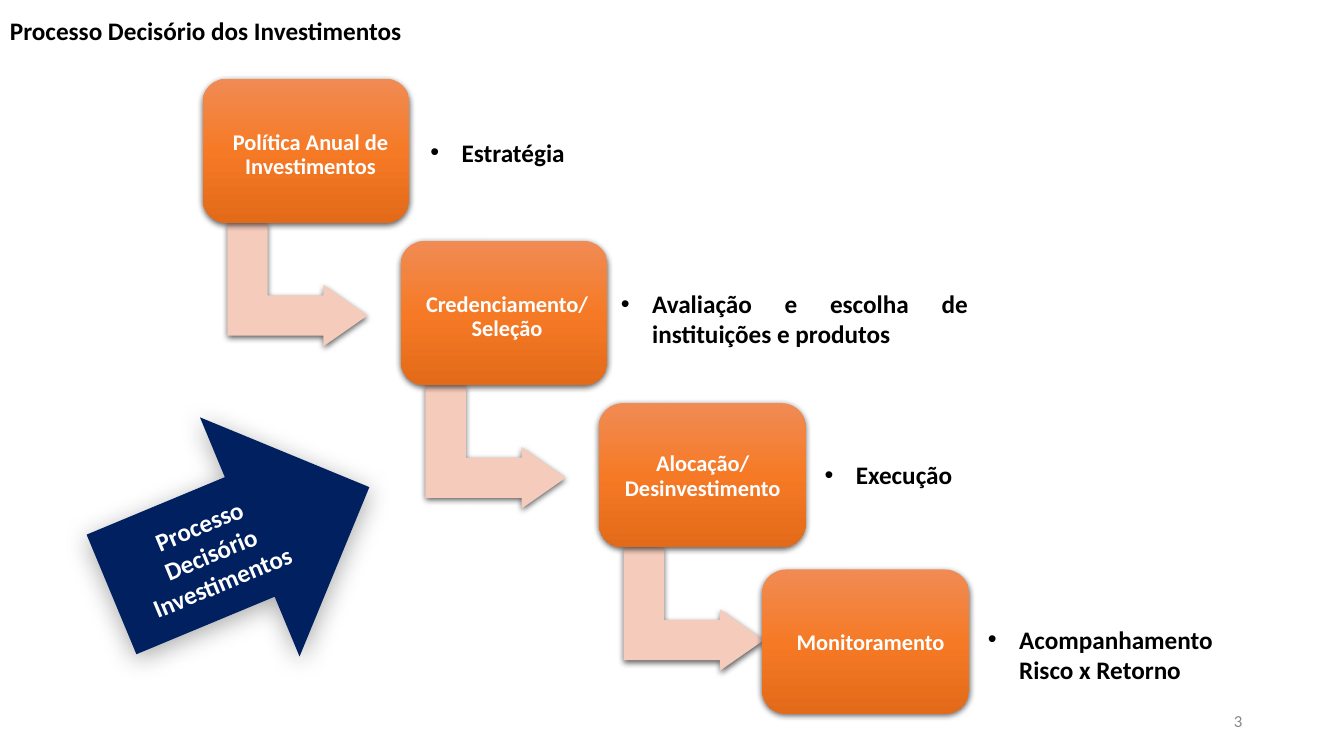
from dataclasses import dataclass
from copy import deepcopy
from lxml import etree
from pptx import Presentation
from pptx.dml.color import RGBColor
from pptx.enum.shapes import MSO_SHAPE
from pptx.enum.text import MSO_ANCHOR, PP_ALIGN
from pptx.oxml.ns import qn
from pptx.util import Inches, Pt

ROUND = MSO_SHAPE.ROUNDED_RECTANGLE
BENT = MSO_SHAPE.BENT_UP_ARROW
ARROW = MSO_SHAPE.RIGHT_ARROW
LEFT, MID, RIGHT, JUST = PP_ALIGN.LEFT, PP_ALIGN.CENTER, PP_ALIGN.RIGHT, PP_ALIGN.JUSTIFY
TOP, CENTER = MSO_ANCHOR.TOP, MSO_ANCHOR.MIDDLE

BLACK = RGBColor(0x00, 0x00, 0x00)
WHITE = RGBColor(0xFF, 0xFF, 0xFF)
GRAY = RGBColor(0x88, 0x88, 0x88)
NAVY = RGBColor(0x00, 0x20, 0x60)
PEACH = RGBColor(0xF5, 0xCB, 0xBC)
LIGHT = RGBColor(0xF0, 0x8B, 0x54)
ORANGE = RGBColor(0xF6, 0x7A, 0x26)
DARK = RGBColor(0xE3, 0x6A, 0x18)

CELL = Inches(0.1)  # grid square: the slide has 133.3 columns and 75 rows
FONT = "Calibri"
INDENT = Inches(0.31)
BOX_W, BOX_H = 20.5, 14.3
STEP_X, STEP_Y = 19.65, 16.1


@dataclass
class Area:
    col: float
    row: float
    cols: float
    rows: float

    def size(self) -> list[int]:
        return [round(n * CELL) for n in (self.col, self.row, self.cols, self.rows)]


@dataclass
class Shade:
    alpha: int
    blur: float
    dist: float
    angle: int


@dataclass
class Step:
    col: float
    row: float
    name: str
    label: Area
    note: str
    side: Area
    align: PP_ALIGN = JUST


SOFT = Shade(33, 17.8, 4, 87)
FIRM = Shade(63, 4.5, 1.5, 90)
X, Y = 20.1, 7.8
STEPS = [
    Step(X, Y, "Política Anual de Investimentos", Area(21.3, 12.5, 19, 5.9),
         "Estratégia", Area(41.7, 13.1, 24.9, 4), LEFT),
    Step(X + STEP_X, Y + STEP_Y, "Credenciamento/ Seleção", Area(40.8, 28.6, 19, 5.9),
         "Avaliação e escolha de instituições e produtos", Area(60.6, 28.1, 36.4, 7.1)),
    Step(X + 2 * STEP_X, Y + 2 * STEP_Y, "Alocação/ Desinvestimento",
         Area(60.2, 44.4, 19, 5.9), "Execução", Area(80.8, 45.1, 36.4, 4)),
    Step(75.6, 56.5, "Monitoramento", Area(76.2, 62.1, 20.3, 3.4),
         "Acompanhamento Risco x Retorno", Area(97, 61.4, 27.7, 7.1)),
]


def add_bullet(para) -> None:
    props = para._p.get_or_add_pPr()
    props.set("marL", str(INDENT))
    props.set("indent", str(-INDENT))
    tint = etree.SubElement(props, qn("a:buClr"))
    etree.SubElement(tint, qn("a:srgbClr"), val=str(BLACK))
    etree.SubElement(props, qn("a:buFont"), typeface="Arial")
    etree.SubElement(props, qn("a:buChar"), char="•")


def write(shape, text: str, *, size: float = 18, color: RGBColor = BLACK,
          bold: bool = True, align: PP_ALIGN = LEFT, anchor: MSO_ANCHOR = TOP,
          space: float = 1.0, bullet: bool = False) -> None:
    """Fill a shape with text, one paragraph a line."""
    frame = shape.text_frame
    frame.word_wrap = True
    frame.vertical_anchor = anchor
    frame.text = text
    for para in frame.paragraphs:
        if bullet:
            add_bullet(para)
        para.alignment = align
        para.line_spacing = space
        font = para.runs[0].font
        font.name, font.size, font.bold = FONT, Pt(size), bold
        font.color.rgb = color


def add_text(slide, area: Area, text: str, **style) -> None:
    write(slide.shapes.add_textbox(*area.size()), text, **style)


def add_shade(shape, shade: Shade) -> None:
    shape.shadow.inherit = False
    effects = shape._element.spPr.find(qn("a:effectLst"))
    outer = etree.SubElement(
        effects, qn("a:outerShdw"), blurRad=str(Pt(shade.blur)), dist=str(Pt(shade.dist)),
        dir=str(shade.angle * 60000), algn="ctr", rotWithShape="0")
    tint = etree.SubElement(outer, qn("a:srgbClr"), val=str(BLACK))
    etree.SubElement(tint, qn("a:alpha"), val=str(shade.alpha * 1000))


def add_form(slide, kind: MSO_SHAPE, area: Area, colors: list[RGBColor], shade: Shade,
             adjust: tuple[float, ...], turn: float = 0):
    """Draw a preset shape; several colours make a gradient from top to bottom."""
    shape = slide.shapes.add_shape(kind, *area.size())
    shape.rotation = turn
    for i, value in enumerate(adjust):
        shape.adjustments[i] = value
    shape.line.fill.background()
    fill = shape.fill
    if len(colors) == 1:
        fill.solid()
        fill.fore_color.rgb = colors[0]
    else:
        fill.gradient()
        fill.gradient_angle = 270
        stops = next(shape._element.spPr.iter(qn("a:gsLst")))
        while len(stops) < len(colors):
            stops.append(deepcopy(stops[-1]))
        for i, (stop, color) in enumerate(zip(fill.gradient_stops, colors)):
            stop.color.rgb = color
            stop.position = i / (len(colors) - 1)
    add_shade(shape, shade)
    return shape


def main() -> None:
    deck = Presentation()
    deck.slide_width, deck.slide_height = Inches(13.33), Inches(7.5)
    slide = deck.slides.add_slide(deck.slide_layouts[6])

    theme = add_form(slide, ARROW, Area(10, 40.8, 27.7, 25.7), [NAVY], SOFT,
                     (0.5, 0.5), 337.4)
    write(theme, "Processo Decisório\nInvestimentos", color=WHITE, align=MID, anchor=CENTER)

    for step in STEPS:
        if step is not STEPS[-1]:
            add_form(slide, BENT, Area(step.col + 3.3, step.row + 13.5, 12.2, 13.9),
                     [PEACH], FIRM, (0.328, 0.25, 0.358), 90)
        add_form(slide, ROUND, Area(step.col, step.row, BOX_W, BOX_H),
                 [LIGHT, ORANGE, DARK], FIRM, (0.167,))
        add_text(slide, step.label, step.name, size=16, color=WHITE, align=MID, space=0.9)
        add_text(slide, step.side, step.note, align=step.align, bullet=True)

    add_text(slide, Area(0, 1, 44.3, 4.6), "Processo Decisório dos Investimentos")
    add_text(slide, Area(94.2, 69.5, 30, 4), "3", size=12, color=GRAY, bold=False,
             align=RIGHT, anchor=CENTER)
    deck.save("out.pptx")


if __name__ == "__main__":
    main()
